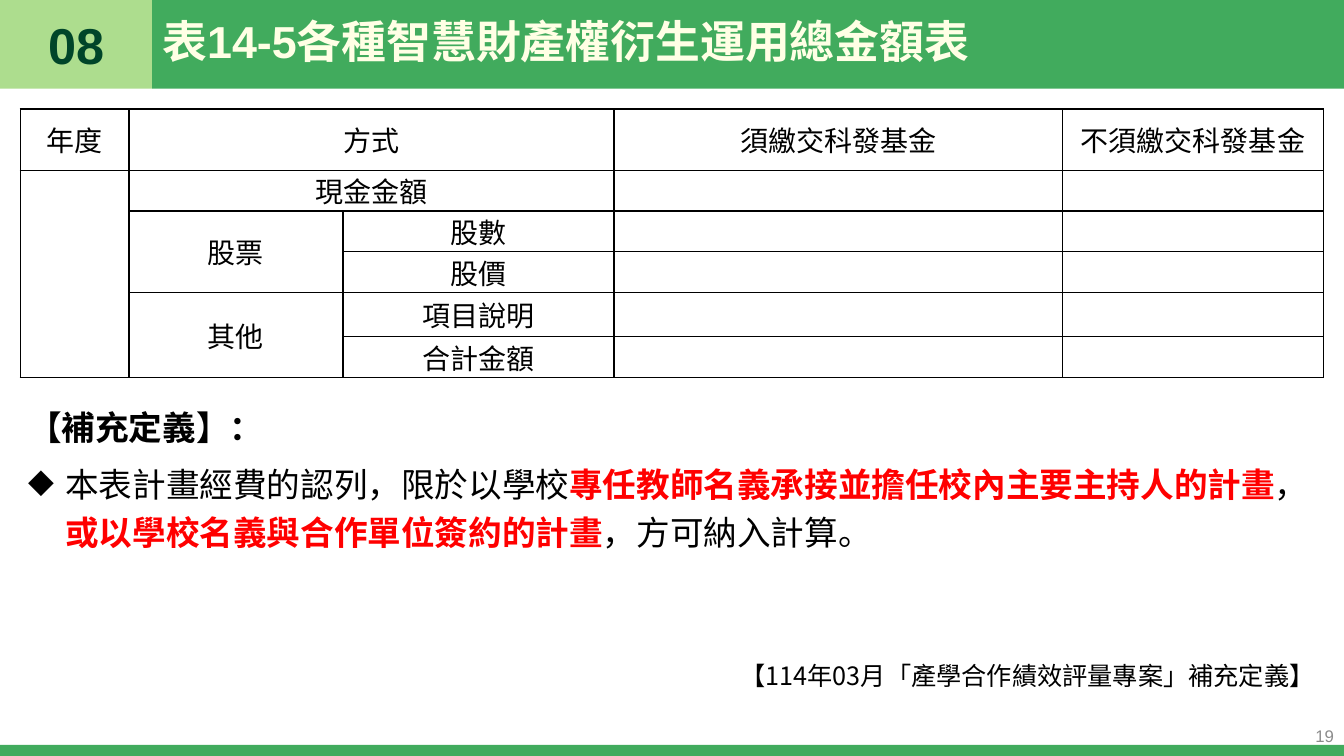
"""Build the slide on total income derived from intellectual property."""
import pptx
import pptx.dml.color
import pptx.enum.shapes
import pptx.enum.text
import pptx.oxml.ns
import pptx.util
from lxml import etree

Pt = pptx.util.Pt
RGBColor = pptx.dml.color.RGBColor
qn = pptx.oxml.ns.qn
Align = pptx.enum.text.PP_ALIGN
Anchor = pptx.enum.text.MSO_ANCHOR

GREEN = RGBColor(0x41, 0xAB, 0x5D)
LIGHT_GREEN = RGBColor(0xAD, 0xDD, 0x8E)
DARK_GREEN = RGBColor(0x00, 0x45, 0x29)
CREAM = RGBColor(0xFF, 0xFF, 0xE5)
GRAY = RGBColor(0x8C, 0x8C, 0x8C)
BLACK = RGBColor(0x00, 0x00, 0x00)
RED = RGBColor(0xFF, 0x00, 0x00)
LATIN = "Arial"
CHINESE = "Noto Sans CJK SC"

WIDTH, HEIGHT = 960, 540
HEADER_HEIGHT, NUMBER_WIDTH = 63.3, 108.7
FOOTER_TOP = 532

TITLE = "表14-5各種智慧財產權衍生運用總金額表"
SECTION = "08"
PAGE_NUMBER = "19"
DEFINITION_HEADING = "【補充定義】："
DEFINITION = [
    ("本表計畫經費的認列，限於以學校", False),
    ("專任教師名義承接並擔任校內主要主持人的計畫", True),
    ("，", False),
    ("或以學校名義與合作單位簽約的計畫", True),
    ("，方可納入計算。", False),
]
CITATION = "【114年03月「產學合作績效評量專案」補充定義】"

COLUMN_WIDTHS = [77.8, 152.8, 193.6, 320.4, 186.4]
ROW_HEIGHTS = [43.9, 29, 29, 29, 31.7, 29]
ROWS = [
    ["年度", "方式", "", "須繳交科發基金", "不須繳交科發基金"],
    ["", "現金金額", "", "", ""],
    ["", "股票", "股數", "", ""],
    ["", "", "股價", "", ""],
    ["", "其他", "項目說明", "", ""],
    ["", "", "合計金額", "", ""],
]
MERGES = [((0, 1), (0, 2)), ((1, 0), (5, 0)), ((1, 1), (1, 2)),
          ((2, 1), (3, 1)), ((4, 1), (5, 1))]


def style(para, size, color, name=LATIN, bold=False, align=Align.LEFT, spacing=None):
    para.alignment = align
    para.line_spacing = spacing
    font = para.font
    font.size, font.name, font.bold = Pt(size), name, bold
    font.color.rgb = color
    defaults = para._p.pPr.find(qn("a:defRPr"))
    etree.SubElement(defaults, qn("a:ea"), typeface=CHINESE)


def add_band(page, left, top, width, height, color):
    band = page.shapes.add_shape(pptx.enum.shapes.MSO_SHAPE.RECTANGLE,
                                 Pt(left), Pt(top), Pt(width), Pt(height))
    band.shadow.inherit = False
    band.fill.solid()
    band.fill.fore_color.rgb = color
    band.line.fill.background()
    return band


def add_box(page, left, top, width, height, anchor=Anchor.TOP):
    box = page.shapes.add_textbox(Pt(left), Pt(top), Pt(width), Pt(height))
    box.text_frame.word_wrap = True
    box.text_frame.vertical_anchor = anchor
    return box.text_frame


def add_header(page):
    add_band(page, 0, FOOTER_TOP, WIDTH, HEIGHT - FOOTER_TOP, GREEN)
    badge = add_band(page, 0, 0, NUMBER_WIDTH, HEADER_HEIGHT, LIGHT_GREEN)
    badge.text_frame.text = SECTION
    badge.text_frame.vertical_anchor = Anchor.MIDDLE
    style(badge.text_frame.paragraphs[0], 36, DARK_GREEN, bold=True, align=Align.CENTER)
    add_band(page, NUMBER_WIDTH, 0, WIDTH - NUMBER_WIDTH, HEADER_HEIGHT, GREEN)

    title = page.shapes.title
    title.left, title.top = Pt(NUMBER_WIDTH), Pt(0)
    title.width, title.height = Pt(836.6), Pt(HEADER_HEIGHT)
    title.text_frame.text = TITLE
    title.text_frame.auto_size = pptx.enum.text.MSO_AUTO_SIZE.NONE
    title.text_frame.vertical_anchor = Anchor.MIDDLE
    style(title.text_frame.paragraphs[0], 32, CREAM, bold=True, spacing=0.9)
    page.shapes._spTree.append(title._element)


def format_cell(cell, text):
    cell.margin_left = cell.margin_right = Pt(5)
    cell.margin_top = cell.margin_bottom = Pt(0)
    cell.vertical_anchor = Anchor.MIDDLE
    cell.text = text
    style(cell.text_frame.paragraphs[0], 20, BLACK, align=Align.CENTER)
    properties = cell._tc.get_or_add_tcPr()
    for side in ("a:lnL", "a:lnR", "a:lnT", "a:lnB"):
        border = etree.SubElement(properties, qn(side), w=str(Pt(1)))
        fill = etree.SubElement(border, qn("a:solidFill"))
        etree.SubElement(fill, qn("a:srgbClr"), val=str(BLACK))
    cell.fill.background()


def add_amount_table(page):
    frame = page.shapes.add_table(len(ROWS), len(COLUMN_WIDTHS), Pt(14.4), Pt(77.8),
                                  Pt(sum(COLUMN_WIDTHS)), Pt(sum(ROW_HEIGHTS)))
    table = frame.table
    table.first_row = table.horz_banding = False
    for column, width in zip(table.columns, COLUMN_WIDTHS):
        column.width = Pt(width)
    for row, height, texts in zip(table.rows, ROW_HEIGHTS, ROWS):
        row.height = Pt(height)
        for cell, text in zip(row.cells, texts):
            format_cell(cell, text)
    for first, last in MERGES:
        table.cell(*first).merge(table.cell(*last))


def add_definition(page):
    frame = add_box(page, 13, 284.4, 933, 130)
    heading = frame.paragraphs[0]
    heading.text = DEFINITION_HEADING
    style(heading, 24, BLACK, CHINESE, bold=True, spacing=1.1)

    para = frame.add_paragraph()
    properties = para._p.get_or_add_pPr()
    properties.set("marL", str(Pt(26.6)))
    properties.set("indent", str(Pt(-26.6)))
    etree.SubElement(properties, qn("a:buChar"), char="◆")
    style(para, 24, BLACK, CHINESE, spacing=1.2)
    para.space_before = Pt(6)
    for text, emphasized in DEFINITION:
        span = para.add_run()
        span.text = text
        span.font.bold = emphasized
        span.font.color.rgb = RED if emphasized else BLACK

    citation = add_box(page, 413, 466, 533, 36).paragraphs[0]
    citation.text = CITATION
    style(citation, 18, BLACK, CHINESE, align=Align.RIGHT, spacing=1.1)


def main():
    deck = pptx.Presentation()
    deck.slide_width, deck.slide_height = Pt(WIDTH), Pt(HEIGHT)
    page = deck.slides.add_slide(deck.slide_layouts[5])
    add_header(page)
    add_amount_table(page)
    add_definition(page)
    number = add_box(page, 744, 511.2, 216, 28.8, Anchor.MIDDLE).paragraphs[0]
    number.text = PAGE_NUMBER
    style(number, 12, GRAY, align=Align.RIGHT)
    deck.save("out.pptx")


if __name__ == "__main__":
    main()
